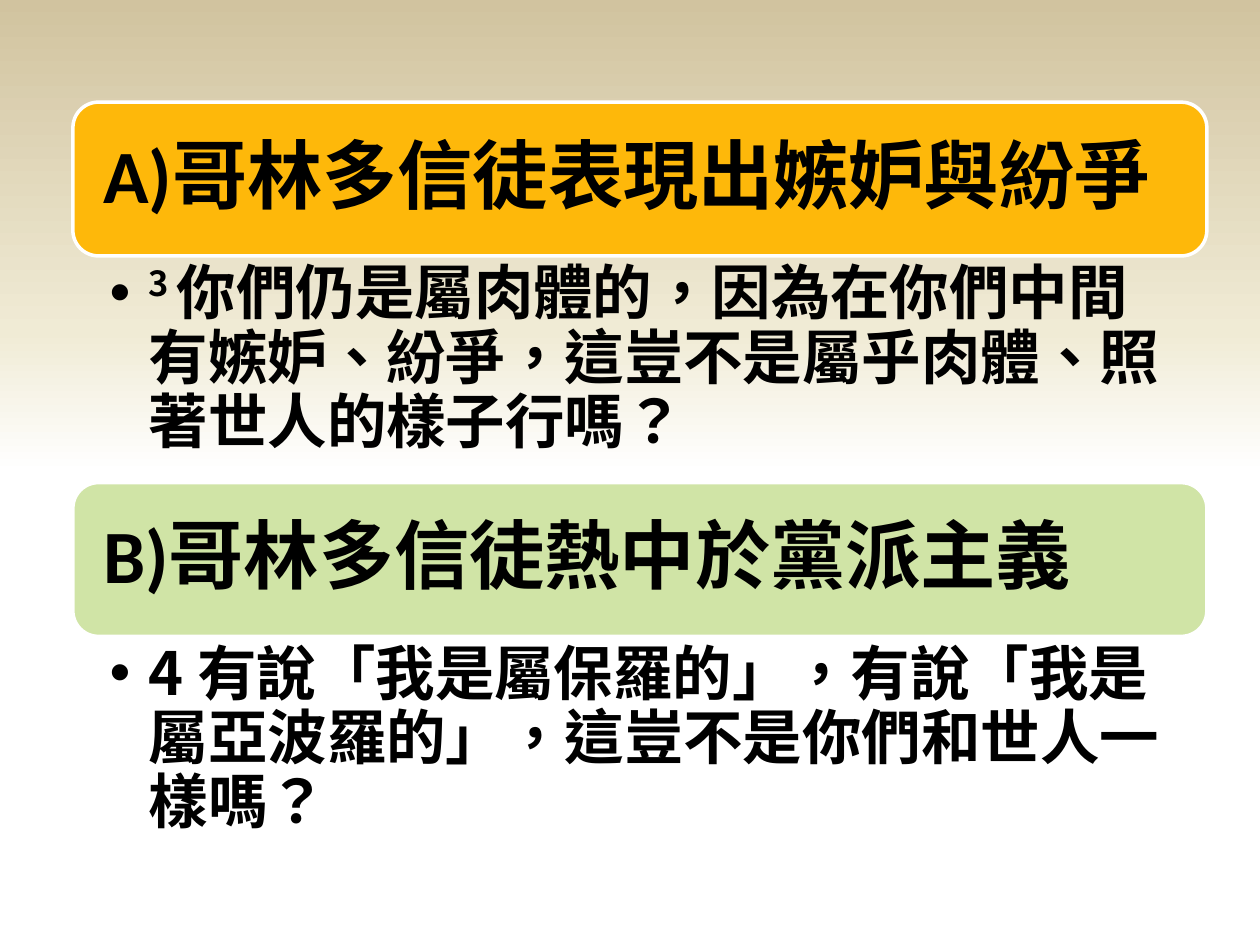
from dataclasses import dataclass

from lxml.etree import SubElement
from pptx import Presentation
from pptx.dml.color import RGBColor
from pptx.enum.shapes import MSO_SHAPE
from pptx.enum.text import MSO_ANCHOR, MSO_AUTO_SIZE, PP_ALIGN
from pptx.oxml import parse_xml
from pptx.oxml.ns import nsdecls, qn
from pptx.slide import Slide
from pptx.util import Cm, Pt

LEFT, TOP, WIDTH = 1.47, 2.06, 22.86
BANNER_HEIGHT, VERSE_HEIGHT = 3.1, 4.57
HEADING_INSET = 0.15
CHINESE_FONT = "Noto Sans CJK SC"
GRADIENT_STOPS = [(50, "FFFFFF"), (65, "F0EBD5"), (100, "D1C39F")]


@dataclass
class Section:
    heading: str
    verse: str
    color: str
    superscript: str = ""


SECTIONS = [
    Section(
        "A)哥林多信徒表現出嫉妒與紛爭",
        "你們仍是屬肉體的，因為在你們中間有嫉妒、紛爭，這豈不是屬乎肉體、照著世人的樣子行嗎？",
        "FEB80A",
        "3 ",
    ),
    Section(
        "B)哥林多信徒熱中於黨派主義",
        "4 有說「我是屬保羅的」，有說「我是屬亞波羅的」，這豈不是你們和世人一樣嗎？",
        "D0E4A6",
    ),
]


def rgb(color: str) -> RGBColor:
    return RGBColor.from_string(color)


def paint_background(slide: Slide) -> None:
    fill = slide.background.fill
    fill.gradient()
    fill.gradient_angle = 90
    stops = fill._fill._gradFill.find(qn("a:gsLst"))
    for stop in list(stops):
        stops.remove(stop)
    for position, color in GRADIENT_STOPS:
        stops.append(parse_xml(
            f'<a:gs {nsdecls("a")} pos="{position * 1000}">'
            f'<a:srgbClr val="{color}"/></a:gs>'
        ))


def place(shape, left: float, top: float, width: float, height: float) -> None:
    shape.left, shape.top = Cm(left), Cm(top)
    shape.width, shape.height = Cm(width), Cm(height)


def prepare_text(shape, insets: tuple, anchor: MSO_ANCHOR, font_name: str, size: int):
    frame = shape.text_frame
    frame.word_wrap = True
    frame.auto_size = MSO_AUTO_SIZE.NONE
    frame.vertical_anchor = anchor
    frame.margin_left, frame.margin_top, frame.margin_right, frame.margin_bottom = map(Cm, insets)
    paragraph = frame.paragraphs[0]
    paragraph.alignment = PP_ALIGN.LEFT
    paragraph.line_spacing = 0.9
    paragraph.space_before = Pt(0)
    font = paragraph.font
    font.name, font.size, font.bold = font_name, Pt(size), True
    font.color.rgb = rgb("000000")
    SubElement(font._element, qn("a:ea"), typeface=CHINESE_FONT)
    return paragraph


def add_run(paragraph, text: str, baseline: int = 0) -> None:
    run = paragraph.add_run()
    run.text = text
    properties = run._r.get_or_add_rPr()
    properties.set("lang", "zh-TW")
    if baseline:
        properties.set("baseline", str(baseline * 1000))


def add_bullet(paragraph) -> None:
    paragraph.level = 1
    properties = paragraph._p.get_or_add_pPr()
    properties.set("marL", str(Cm(0.79)))
    properties.set("indent", str(Cm(-0.79)))
    bullet = parse_xml(f'<a:buChar {nsdecls("a")} char="•"/>')
    properties.find(qn("a:defRPr")).addprevious(bullet)


def draw_section(slide: Slide, section: Section, top: float, heading, verse) -> None:
    banner = slide.shapes.add_shape(
        MSO_SHAPE.ROUNDED_RECTANGLE, Cm(LEFT), Cm(top), Cm(WIDTH), Cm(BANNER_HEIGHT)
    )
    banner.shadow.inherit = False
    banner.fill.solid()
    banner.fill.fore_color.rgb = rgb(section.color)
    banner.line.color.rgb = rgb("FFFFFF")
    banner.line.width = Pt(2)

    place(heading, LEFT + HEADING_INSET, top + HEADING_INSET,
          WIDTH - 2 * HEADING_INSET, BANNER_HEIGHT - 2 * HEADING_INSET)
    paragraph = prepare_text(heading, (0.46,) * 4, MSO_ANCHOR.MIDDLE, "Calibri", 43)
    add_run(paragraph, section.heading)

    place(verse, LEFT, top + BANNER_HEIGHT, WIDTH, VERSE_HEIGHT)
    paragraph = prepare_text(verse, (0.74, 0.15, 0.84, 0.15), MSO_ANCHOR.TOP, CHINESE_FONT, 34)
    add_bullet(paragraph)
    if section.superscript:
        add_run(paragraph, section.superscript, baseline=30)
    add_run(paragraph, section.verse)

    for placeholder in (heading, verse):
        slide.shapes._spTree.append(placeholder._element)


def main() -> None:
    presentation = Presentation()
    presentation.slide_width, presentation.slide_height = Cm(25.4), Cm(19.05)
    slide = presentation.slides.add_slide(presentation.slide_layouts.get_by_name("Comparison"))
    paint_background(slide)
    title, *placeholders = slide.placeholders
    title._element.getparent().remove(title._element)
    pairs = zip(placeholders[::2], placeholders[1::2])
    for index, (section, (heading, verse)) in enumerate(zip(SECTIONS, pairs)):
        top = TOP + index * (BANNER_HEIGHT + VERSE_HEIGHT)
        draw_section(slide, section, top, heading, verse)
    presentation.save("out.pptx")


if __name__ == "__main__":
    main()
